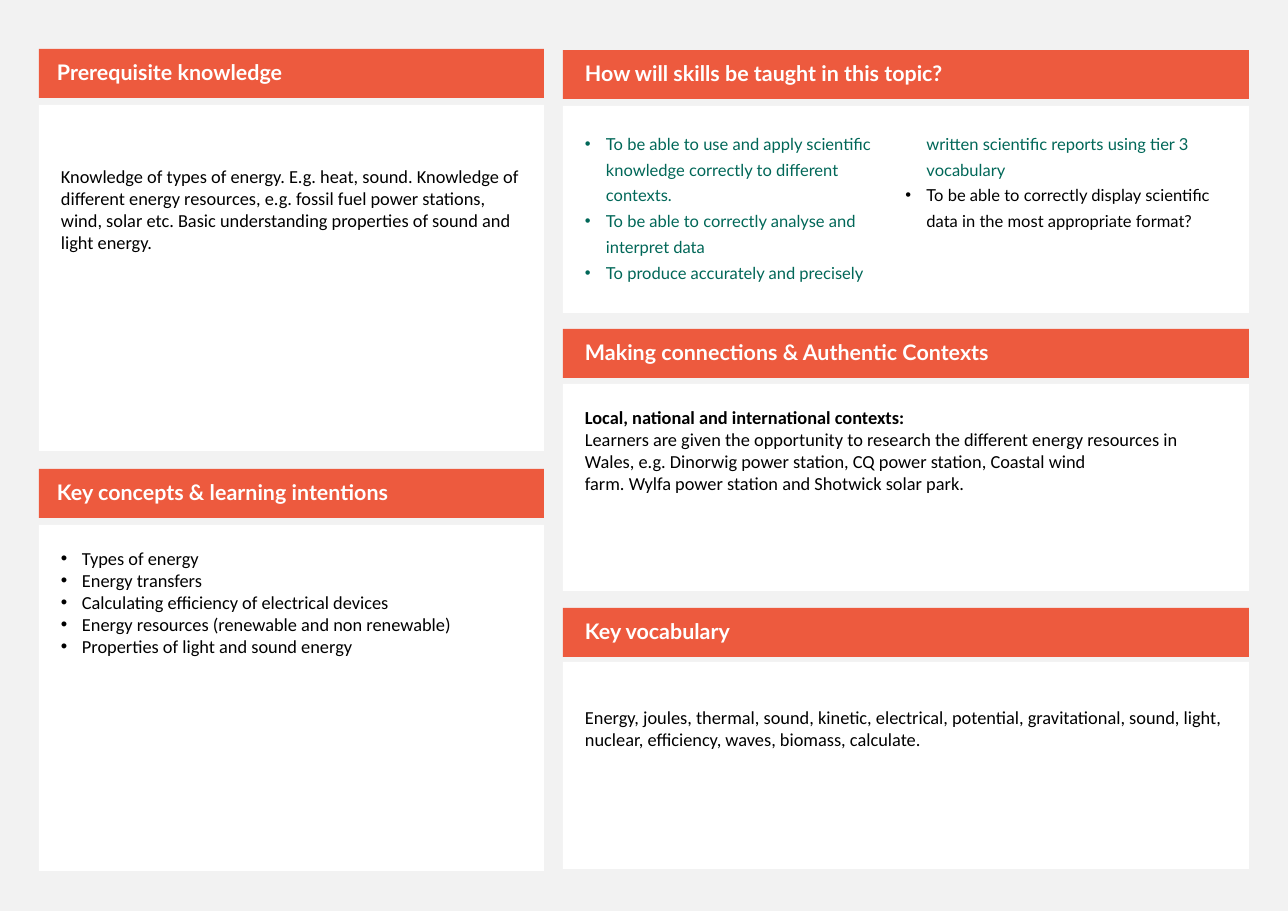
import dataclasses

import pptx
import pptx.dml.color
import pptx.enum.shapes
import pptx.enum.text
import pptx.oxml.ns
import pptx.util
from lxml import etree

EMU_PER_PX = 8298
NBSP = chr(160)


def px(length):
    return pptx.util.Emu(length * EMU_PER_PX)


def rgb(code):
    return pptx.dml.color.RGBColor.from_string(code)


@dataclasses.dataclass(frozen=True)
class Theme:
    page: str = "F2F2F2"
    panel: str = "FFFFFF"
    accent: str = "ED5A3E"
    heading_text: str = "FFFFFF"
    body_text: str = "000000"
    skill_text: str = "006758"
    heading_font: str = "Lato"
    body_font: str = "Calibri"
    heading_size: float = 14
    body_size: float = 12
    skill_size: float = 10.8


class TopicSheet:
    """Holds the theme and the current slide."""

    header_height = 49
    padding = 22
    bullet_indent = 21

    def __init__(self, deck, theme):
        self.theme = theme
        self.slide = deck.slides.add_slide(deck.slide_layouts[6])
        self.slide.background.fill.solid()
        self.slide.background.fill.fore_color.rgb = rgb(theme.page)

    def block(self, left, top, width, height, color, insets):
        rect = self.slide.shapes.add_shape(
            pptx.enum.shapes.MSO_SHAPE.RECTANGLE,
            px(left), px(top), px(width), px(height))
        rect.shadow.inherit = False
        rect.fill.solid()
        rect.fill.fore_color.rgb = rgb(color)
        rect.line.fill.background()
        frame = rect.text_frame
        frame.word_wrap = True
        (frame.margin_left, frame.margin_top,
         frame.margin_right, frame.margin_bottom) = map(px, insets)
        return frame

    def paragraph(self, frame, index, text, font, size, color,
                  bold=False, bullet=False, spacing=1.0):
        line = frame.paragraphs[0] if index == 0 else frame.add_paragraph()
        line.alignment = pptx.enum.text.PP_ALIGN.LEFT
        line.line_spacing = spacing
        run = line.add_run()
        run.text = text
        run.font.name = font
        run.font.size = pptx.util.Pt(size)
        run.font.bold = bold
        run.font.color.rgb = rgb(color)
        if bullet:
            self.bullet(line)

    def bullet(self, line):
        properties = line._p.get_or_add_pPr()
        indent = px(self.bullet_indent)
        properties.set("marL", str(indent))
        properties.set("indent", str(-indent))
        face = etree.SubElement(properties, pptx.oxml.ns.qn("a:buFont"))
        face.set("typeface", "Arial")
        mark = etree.SubElement(properties, pptx.oxml.ns.qn("a:buChar"))
        mark.set("char", "•")

    def header(self, left, top, width, title, inset):
        frame = self.block(left, top, width, self.header_height,
                           self.theme.accent, (inset, 5, 11, 5))
        frame.vertical_anchor = pptx.enum.text.MSO_ANCHOR.MIDDLE
        self.paragraph(frame, 0, title, self.theme.heading_font,
                       self.theme.heading_size, self.theme.heading_text,
                       bold=True, spacing=0.9)

    def panel(self, left, top, width, height, text_top=padding):
        frame = self.block(left, top, width, height, self.theme.panel,
                           (self.padding, text_top, self.padding + 1, self.padding))
        frame.vertical_anchor = pptx.enum.text.MSO_ANCHOR.TOP
        return frame

    def body(self, frame, lines, bold_first=False, bullet=False):
        for index, text in enumerate(lines):
            self.paragraph(frame, index, text, self.theme.body_font,
                           self.theme.body_size, self.theme.body_text,
                           bold=bold_first and index == 0, bullet=bullet)

    def skills(self, frame, lines):
        frame._txBody.bodyPr.set("numCol", "2")
        for index, (text, color) in enumerate(lines):
            self.paragraph(frame, index, text, self.theme.heading_font,
                           self.theme.skill_size, color, bullet=True, spacing=1.3)


def main():
    deck = pptx.Presentation()
    deck.slide_width, deck.slide_height = px(1288), px(911)
    theme = Theme()
    sheet = TopicSheet(deck, theme)

    # Columns of the sheet: left, width, panel height, heading inset
    left_column = (39, 505, 346, 18)
    right_column = (563, 686, 207, 22)

    def section(column, title, header_top, panel_top, text_top=sheet.padding):
        left, width, height, inset = column
        sheet.header(left, header_top, width, title, inset)
        return sheet.panel(left, panel_top, width, height, text_top)

    # Left column
    prerequisites = section(left_column, "Prerequisite knowledge", 49, 105, 60)
    sheet.body(prerequisites, [
        "Knowledge of types of energy. E.g. heat, sound. Knowledge of different "
        "energy resources, e.g. fossil fuel power stations, wind, solar etc. "
        "Basic understanding properties of sound and light energy."])

    concepts = section(left_column, "Key concepts & learning intentions", 469, 525)
    sheet.body(concepts, [
        "Types of energy",
        "Energy transfers",
        "Calculating efficiency of electrical devices",
        "Energy resources (renewable and non renewable)",
        "Properties of light and sound energy"], bullet=True)

    # Right column
    skills = section(right_column, "How will skills be taught in this topic?", 50, 106)
    sheet.skills(skills, [
        ("To be able to use and apply scientific knowledge correctly to "
         "different contexts.", theme.skill_text),
        ("To be able to correctly analyse and interpret data", theme.skill_text),
        ("To produce accurately and precisely written scientific reports using "
         "tier 3 vocabulary", theme.skill_text),
        ("To be able to correctly display scientific data in the most "
         "appropriate format?", theme.body_text)])

    contexts = section(right_column, "Making connections & Authentic Contexts", 329, 384)
    sheet.body(contexts, [
        "Local, national and international contexts:",
        "Learners are given the opportunity to research the different energy "
        "resources in Wales, e.g. Dinorwig power station, CQ power station, "
        f"Coastal wind farm.{NBSP}Wylfa{NBSP}power station and Shotwick solar park."],
        bold_first=True)

    vocabulary = section(right_column, "Key vocabulary", 608, 662, 44)
    sheet.body(vocabulary, [
        "Energy, joules, thermal, sound, kinetic, electrical, potential, "
        "gravitational, sound, light, nuclear, efficiency, waves, biomass, "
        "calculate."])

    deck.save("out.pptx")


if __name__ == "__main__":
    main()
